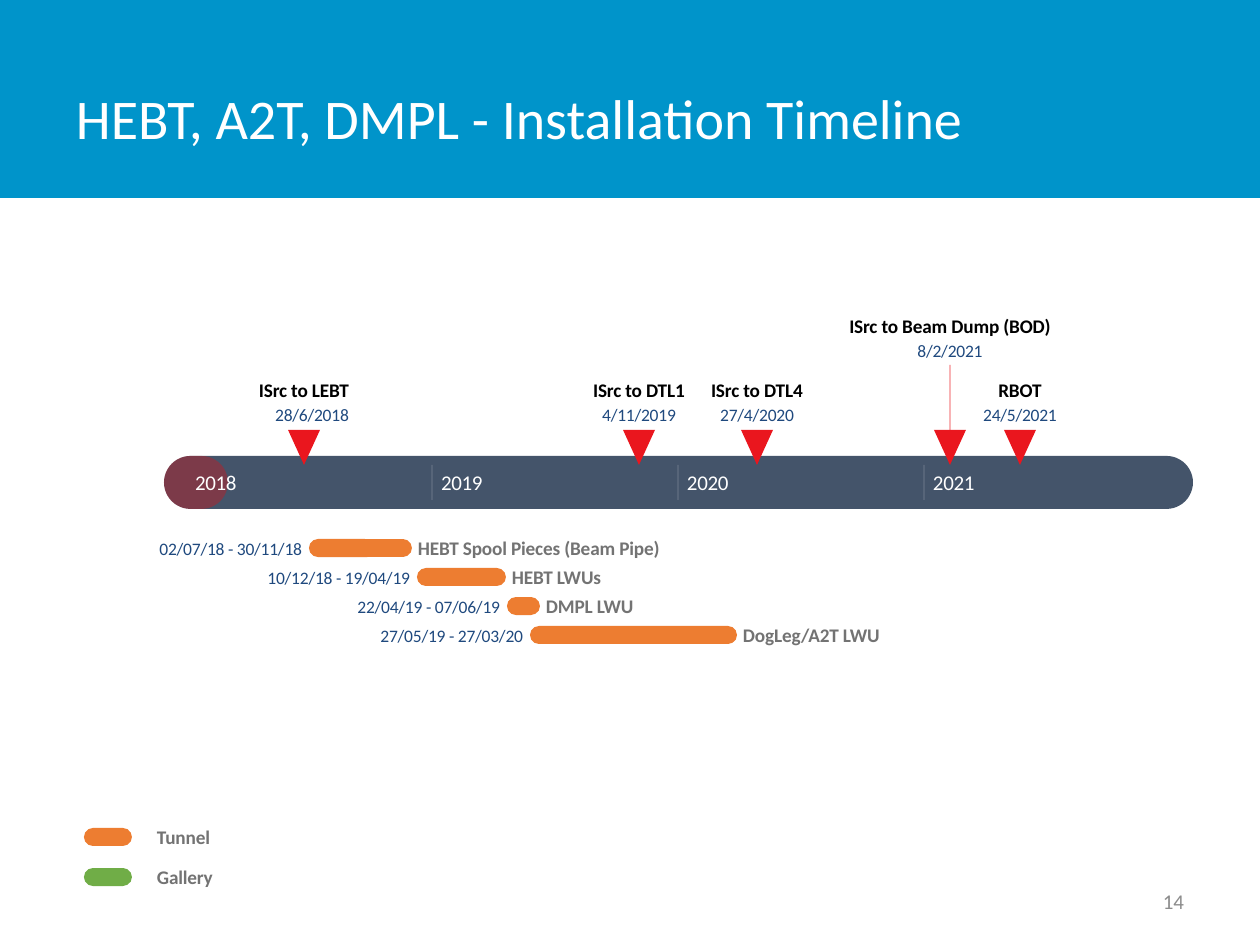
from lxml import etree
from pptx import Presentation
from pptx.dml.color import RGBColor
from pptx.enum.shapes import MSO_CONNECTOR, MSO_SHAPE
from pptx.enum.text import MSO_ANCHOR, PP_ALIGN
from pptx.oxml.ns import qn
from pptx.util import Emu, Pt

RECT, PILL, TRIANGLE = MSO_SHAPE.RECTANGLE, MSO_SHAPE.ROUNDED_RECTANGLE, MSO_SHAPE.ISOSCELES_TRIANGLE
LINE = MSO_CONNECTOR.STRAIGHT
LEFT, CENTER, RIGHT = PP_ALIGN.LEFT, PP_ALIGN.CENTER, PP_ALIGN.RIGHT
MIDDLE = MSO_ANCHOR.MIDDLE

FONT = "Calibri"
WHITE, BLACK, GRAY, NAVY = "FFFFFF", "000000", "737373", "1F497E"
BLUE, SLATE, RED, ORANGE, GREEN = "0094CA", "44546A", "EA161E", "ED7D31", "70AD47"

# Marker centre, label, label width, date, date offset, height above the row
MILESTONES = [
    (304, "ISrc to LEBT", 98, "28/6/2018", 8, 0),
    (639, "ISrc to DTL1", 98, "4/11/2019", 0, 0),
    (757, "ISrc to DTL4", 98, "27/4/2020", 0, 0),
    (950, "ISrc to Beam Dump (BOD)", 208, "8/2/2021", 0, 64),
    (1020, "RBOT", 48, "24/5/2021", 0, 0),
]
# Bar left, bar width, dates, label
TASKS = [
    (309, 103, "02/07/18 - 30/11/18", "HEBT Spool Pieces (Beam Pipe)"),
    (417, 89, "10/12/18 - 19/04/19", "HEBT LWUs"),
    (507, 33, "22/04/19 - 07/06/19", "DMPL LWU"),
    (530, 207, "27/05/19 - 27/03/20", "DogLeg/A2T LWU"),
]


def px(n):
    return Emu(round(n * 914400 / 126))


def rgb(color):
    return RGBColor.from_string(color)


def set_alpha(fill, percent):
    clr = fill._xPr.find(".//" + qn("a:srgbClr"))
    etree.SubElement(clr, qn("a:alpha")).set("val", str(percent * 1000))


def add_shape(slide, kind, x, y, w, h, color, alpha=None):
    sp = slide.shapes.add_shape(kind, px(x), px(y), px(w), px(h))
    sp.shadow.inherit = False
    sp.fill.solid()
    sp.fill.fore_color.rgb = rgb(color)
    sp.line.fill.background()
    if kind == PILL:
        sp.adjustments[0] = 0.5
    if alpha:
        set_alpha(sp.fill, alpha)
    return sp


def add_line(slide, x, y1, y2, color, width, alpha):
    ln = slide.shapes.add_connector(LINE, px(x), px(y1), px(x), px(y2))
    ln.line.color.rgb = rgb(color)
    ln.line.width = Pt(width)
    set_alpha(ln.line.fill, alpha)
    etree.SubElement(ln._element.spPr, qn("a:effectLst"))


def add_text(slide, text, x, y, w, h, size=11, color=GRAY, bold=False,
             align=LEFT, spacing=-10, inset=0):
    tf = slide.shapes.add_textbox(px(x), px(y), px(w), px(h)).text_frame
    tf.word_wrap = True
    tf.vertical_anchor = MIDDLE
    tf.margin_left = tf.margin_right = px(inset)
    tf.margin_top = tf.margin_bottom = 0
    p = tf.paragraphs[0]
    p.alignment = align
    r = p.add_run()
    r.text = text
    r.font.name, r.font.size, r.font.bold = FONT, Pt(size), bold
    r.font.color.rgb = rgb(color)
    if spacing:
        r._r.get_or_add_rPr().set("spc", str(spacing))


def add_header(slide, x, y, w, h):
    add_shape(slide, RECT, x, y, w, h, BLUE)
    add_text(slide, "HEBT, A2T, DMPL - Installation Timeline", x + 63, y + 38,
             984, 158, size=32, color=WHITE, spacing=0, inset=13)


def add_legend(slide, x, y):
    for i, (name, color) in enumerate([("Tunnel", ORANGE), ("Gallery", GREEN)]):
        top = y + 40 * i
        add_shape(slide, PILL, x, top, 48, 18, color)
        add_text(slide, name, x + 73, top - 3, 111, 24, bold=True)


def add_year_band(slide, x, y, w, h):
    add_shape(slide, PILL, x, y, w, h, SLATE)
    add_shape(slide, PILL, x, y, 64, h, "FF0000", alpha=30)
    for i in range(4):
        left = x + 31 + 246 * i
        if i:
            add_line(slide, left - 9, y + 9, y + h - 9, WHITE, 0.5, 30)
        add_text(slide, str(2018 + i), left, y + 14, 46, 25, size=12,
                 color=WHITE, spacing=-20)


def add_milestones(slide, y):
    for x, name, w, date, date_dx, rise in MILESTONES:
        top = y - rise
        if rise:
            add_line(slide, x, top + 51, y + 69, RED, 0.75, 50)
        add_text(slide, name, x - w / 2, top, w, 24, color=BLACK, bold=True, align=CENTER)
        add_text(slide, date, x + date_dx - 41, top + 26, 82, 21, size=10,
                 color=NAVY, align=CENTER)
        marker = add_shape(slide, TRIANGLE, x - 16, y + 52, 32, 35, RED)
        marker._element.spPr.find(qn("a:xfrm")).set("flipV", "1")


def add_tasks(slide, y):
    for i, (x, w, dates, name) in enumerate(TASKS):
        top = y + 29 * i
        add_shape(slide, PILL, x, top, w, 18, ORANGE)
        add_text(slide, dates, x - 159, top - 1, 152, 21, size=10, color=NAVY, align=RIGHT)
        add_text(slide, name, x + w + 6, top - 3, 267, 24, bold=True)


def main():
    prs = Presentation()
    prs.slide_width, prs.slide_height = px(1260), px(945)
    slide = prs.slides.add_slide(prs.slide_layouts[6])
    add_header(slide, 0, 0, 1260, 198)
    add_legend(slide, 84, 828)
    add_year_band(slide, 164, 456, 1029, 53)
    add_milestones(slide, 378)
    add_tasks(slide, 539)
    # Slide number
    add_text(slide, "14", 903, 876, 294, 50, size=12, color="8C8C8C",
             align=RIGHT, spacing=0, inset=13)
    prs.save("out.pptx")


if __name__ == "__main__":
    main()
